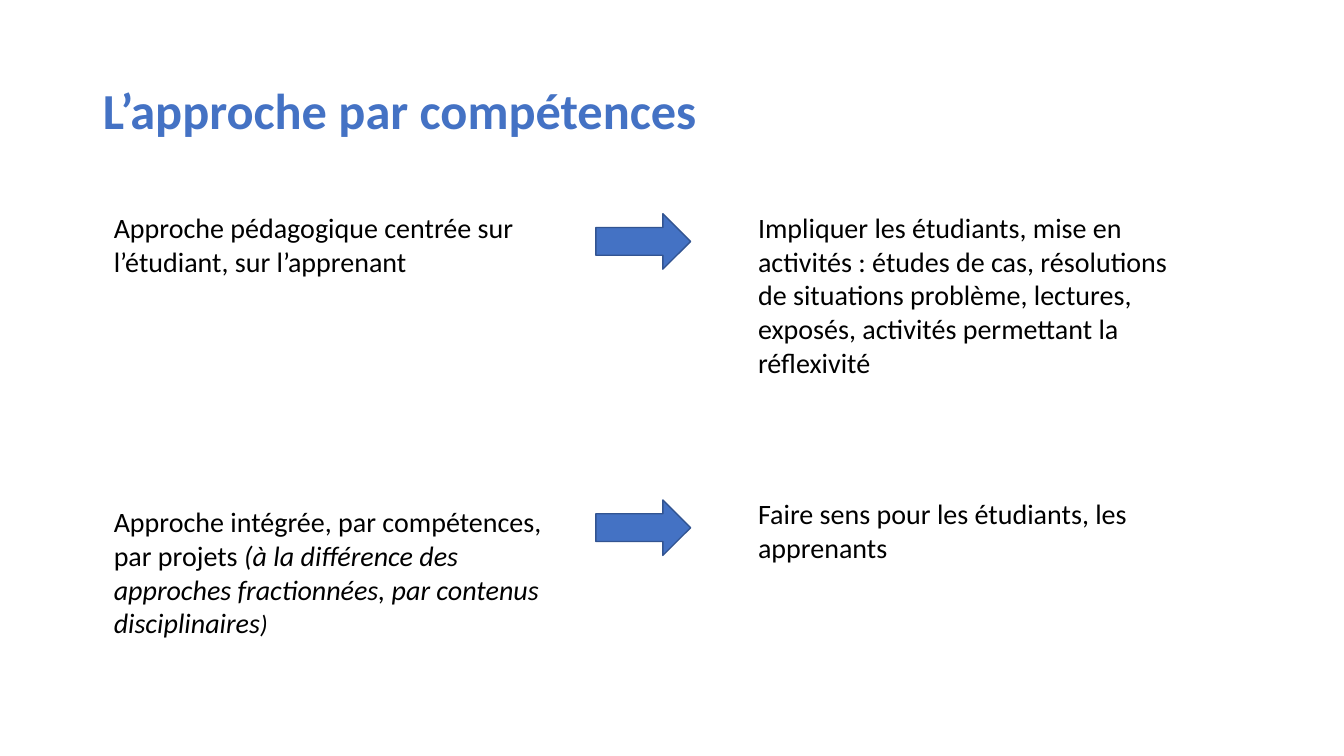
from dataclasses import dataclass

from pptx import Presentation
from pptx.dml.color import RGBColor
from pptx.enum.shapes import MSO_SHAPE
from pptx.enum.text import MSO_ANCHOR, MSO_AUTO_SIZE, PP_ALIGN
from pptx.util import Inches, Pt


@dataclass(frozen=True)
class Theme:
    font: str = "Calibri"
    accent: RGBColor = RGBColor(0x44, 0x72, 0xC4)
    outline: RGBColor = RGBColor(0x32, 0x54, 0x91)
    ink: RGBColor = RGBColor(0, 0, 0)
    title_size: int = 36
    body_size: int = 20
    small_size: int = 18


class SlideBuilder:
    def __init__(self, slide, theme):
        self.slide = slide
        self.theme = theme

    def add_run(self, paragraph, text, size, color, bold=False, italic=False):
        run = paragraph.add_run()
        run.text = text
        font = run.font
        font.name, font.size = self.theme.font, Pt(size)
        font.bold, font.italic = bold, italic
        font.color.rgb = color

    def title(self, text, left, top, width, height):
        heading = self.slide.shapes.title
        heading.left, heading.top = Inches(left), Inches(top)
        heading.width, heading.height = Inches(width), Inches(height)
        frame = heading.text_frame
        frame.word_wrap = True
        frame.auto_size = MSO_AUTO_SIZE.NONE
        frame.vertical_anchor = MSO_ANCHOR.MIDDLE
        paragraph = frame.paragraphs[0]
        paragraph.alignment = PP_ALIGN.LEFT
        paragraph.line_spacing = 0.9
        self.add_run(paragraph, text, self.theme.title_size, self.theme.accent, bold=True)

    def statement(self, pieces, left, top, width, height):
        """Each piece is (text, size, italic)."""
        box = self.slide.shapes.add_textbox(
            Inches(left), Inches(top), Inches(width), Inches(height))
        frame = box.text_frame
        frame.word_wrap = True
        frame.auto_size = MSO_AUTO_SIZE.SHAPE_TO_FIT_TEXT
        for text, size, italic in pieces:
            self.add_run(frame.paragraphs[0], text, size, self.theme.ink, italic=italic)

    def arrow(self, left, top, width, height):
        arrow = self.slide.shapes.add_shape(
            MSO_SHAPE.RIGHT_ARROW, Inches(left), Inches(top), Inches(width), Inches(height))
        arrow.shadow.inherit = False
        arrow.fill.solid()
        arrow.fill.fore_color.rgb = self.theme.accent
        arrow.line.color.rgb = self.theme.outline
        arrow.line.width = Pt(1)


def main():
    prs = Presentation()
    prs.slide_width, prs.slide_height = Inches(13.33), Inches(7.5)
    theme = Theme()
    builder = SlideBuilder(prs.slides.add_slide(prs.slide_layouts[5]), theme)
    body, small = theme.body_size, theme.small_size

    # Title
    builder.title("L’approche par compétences", 0.92, 0.4, 11.5, 1.45)

    # Rows: approach (top, width, height), then consequence (top, width, height)
    rows = [
        ([("Approche pédagogique centrée sur l’étudiant, sur l’apprenant", body, False)],
         (2.04, 4.39, 0.77),
         [("Impliquer les étudiants, mise en activités : études de cas, résolutions de "
           "situations problème, lectures, exposés, activités permettant la réflexivité",
           body, False)],
         (2.04, 4.58, 1.78)),
        ([("Approche intégrée, par compétences, par projets ", body, False),
          ("(à la différence des approches fractionnées, par contenus disciplinaires",
           body, True),
          (")", small, True)],
         (4.96, 4.51, 1.45),
         [("Faire sens pour les étudiants, les apprenants", body, False)],
         (4.88, 4.51, 0.77)),
    ]
    approach_left, arrow_left, consequence_left = 1.03, 5.91, 7.42
    arrow_drop = 0.08  # arrow top below the consequence's top

    # Approach, arrow and consequence of each row
    for approach, approach_box, consequence, consequence_box in rows:
        builder.statement(approach, approach_left, *approach_box)
        builder.arrow(arrow_left, consequence_box[0] + arrow_drop, 0.94, 0.55)
        builder.statement(consequence, consequence_left, *consequence_box)

    prs.save("out.pptx")


if __name__ == "__main__":
    main()
